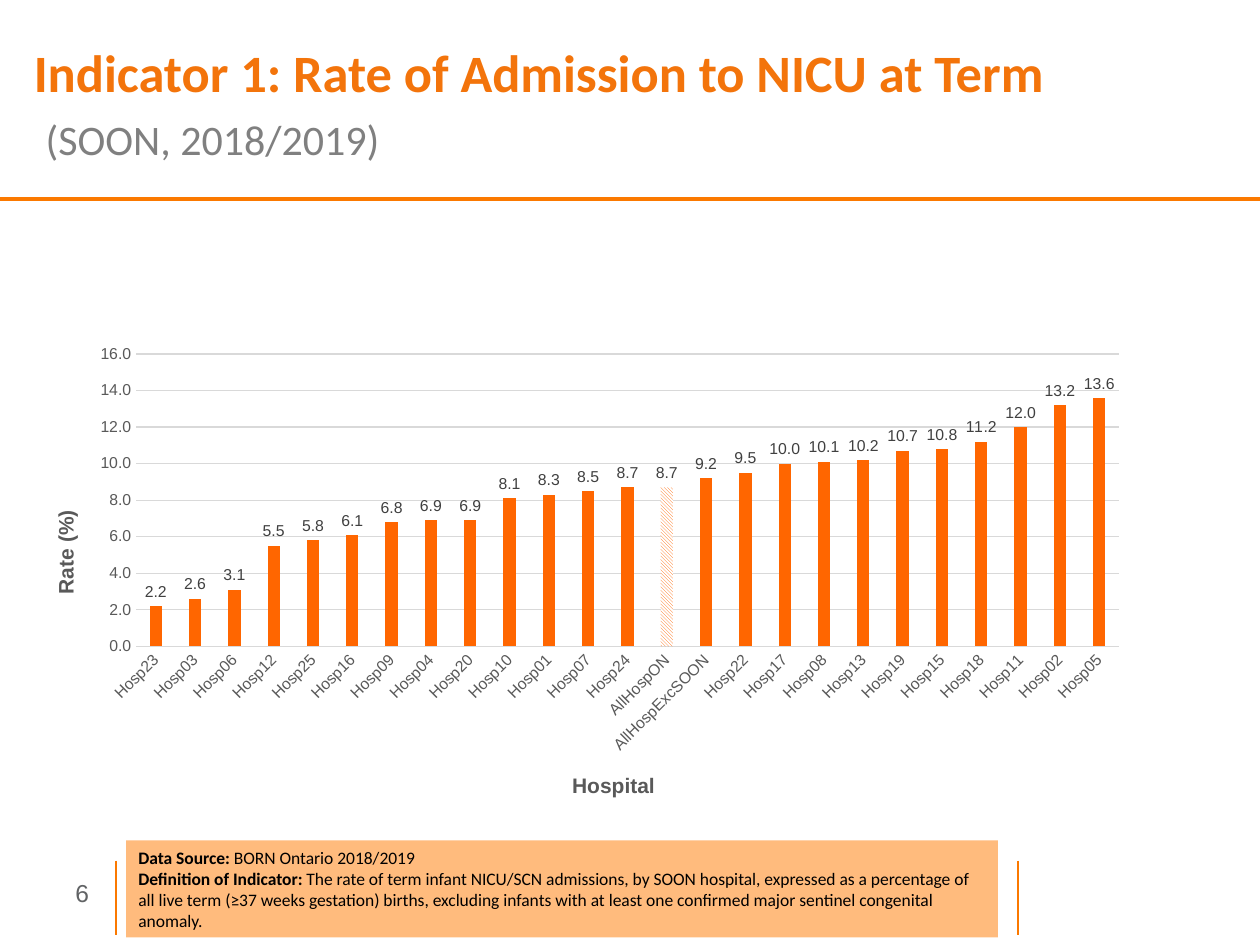
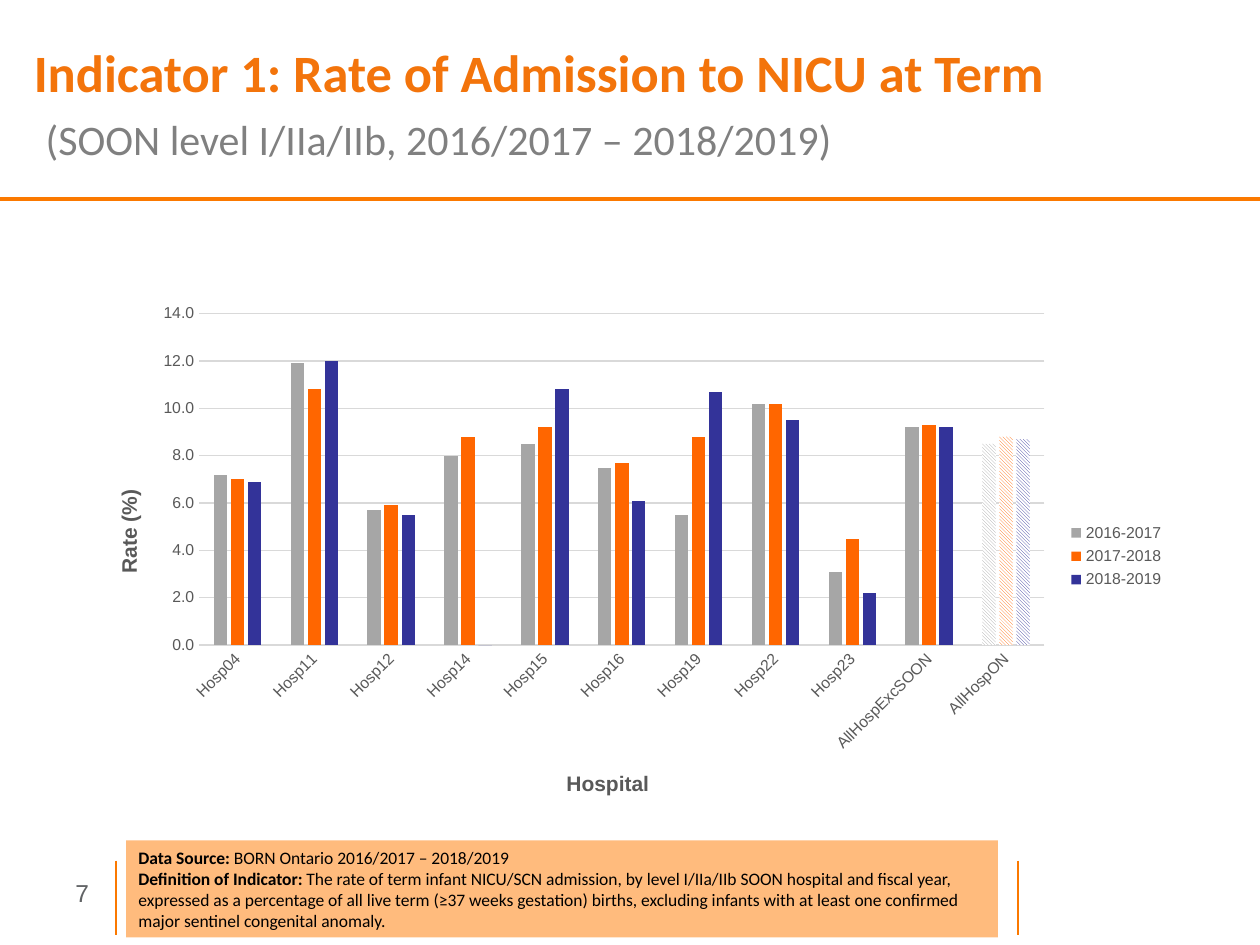
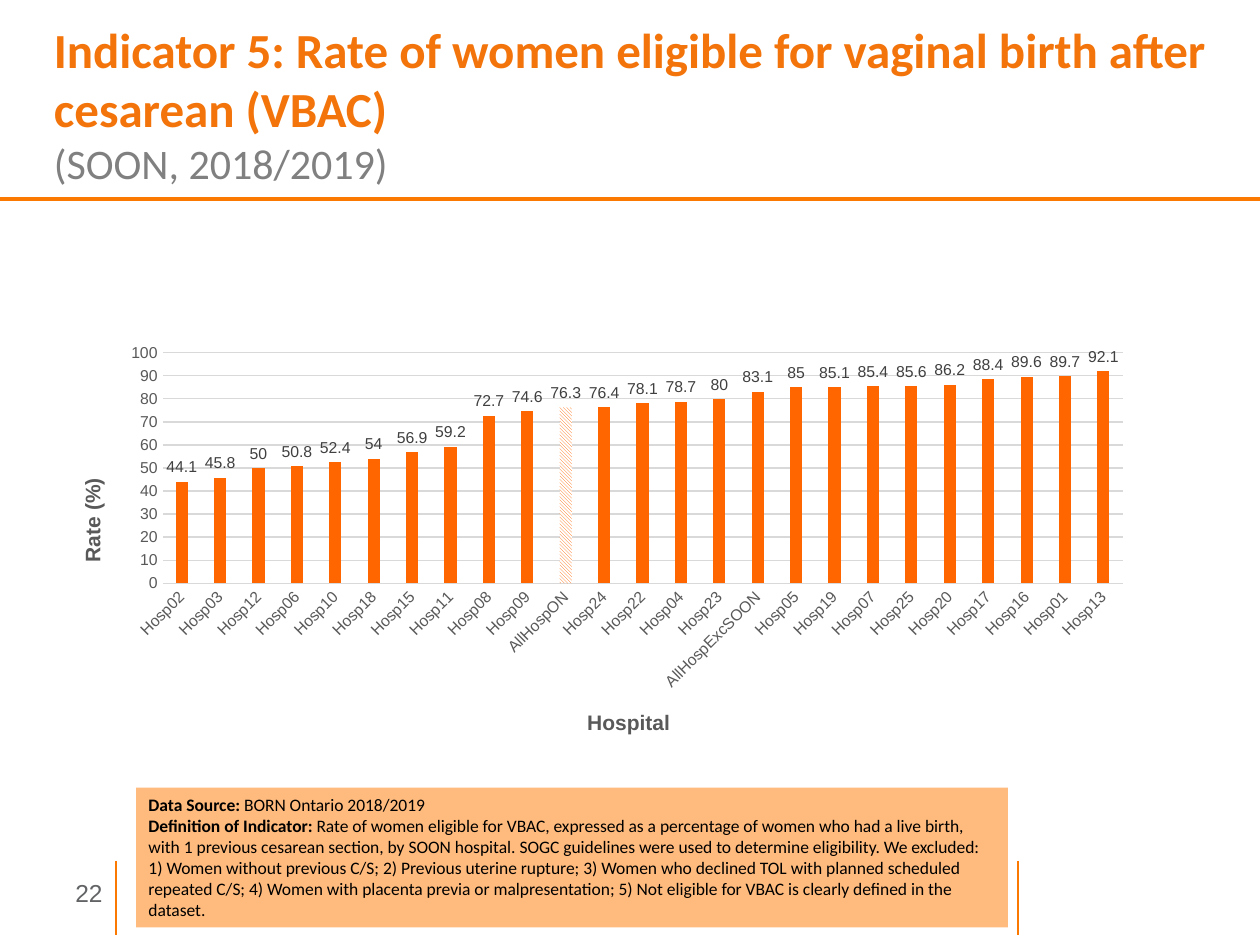
import lxml.etree
import pptx
import pptx.chart.data
import pptx.dml.color
import pptx.enum.chart
import pptx.enum.dml
import pptx.enum.shapes
import pptx.enum.text
import pptx.oxml.ns
import pptx.util
from pptx.util import Inches

ORANGE, TITLE_ORANGE, RULE_ORANGE, NOTE_FILL = "FF6600", "F3740B", "FB7900", "FFBB7D"
GREY, NAVY, AXIS_GREY, GRID_GREY = "A6A6A6", "333399", "595959", "D9D9D9"
ONE_DECIMAL = "##0.0"

NICU_TITLE = "Indicator 1: Rate of Admission to NICU at Term"


def rgb(value):
    return pptx.dml.color.RGBColor.from_string(value)


def assign(target, **values):
    for name, value in values.items():
        setattr(target, name, value)


def style_font(font, size, color, name="Arial", bold=False):
    assign(font, size=pptx.util.Pt(size), name=name, bold=bold)
    font.color.rgb = rgb(color)


def style_line(line, color, width):
    line.color.rgb = rgb(color)
    line.width = pptx.util.Pt(width)


def set_layout(element, index, values, inner=False):
    """Place a chart part; values are fractions of the chart keyed x, y, w, h."""
    qn = pptx.oxml.ns.qn
    for old in element.findall(qn("c:layout")):
        element.remove(old)
    layout = lxml.etree.Element(qn("c:layout"))
    element.insert(index, layout)
    manual = lxml.etree.SubElement(layout, qn("c:manualLayout"))
    settings = [("layoutTarget", "inner")] if inner else []
    settings += [("xMode", "edge"), ("yMode", "edge")]
    settings += [(key, f"{value:.4f}") for key, value in values.items()]
    for tag, value in settings:
        lxml.etree.SubElement(manual, qn("c:" + tag)).set("val", value)


class Deck:
    def __init__(self):
        self.prs = pptx.Presentation()
        assign(self.prs, slide_width=Inches(10), slide_height=Inches(7.5))
        self.slide = None

    def add_slide(self, number):
        self.slide = self.prs.slides.add_slide(self.prs.slide_layouts[6])
        for x in (8.08, 0.92):
            self.rule(x, 6.83, x, 7.42, 1)
        self.rule(0, 1.58, 10, 1.58, 2)
        frame = self.text_box(0.5, 6.92, 0.44, 0.33, word_wrap=False)
        self.run(frame.paragraphs[0], str(number), 14, "616365")

    def rule(self, x1, y1, x2, y2, width):
        line = self.slide.shapes.add_connector(
            pptx.enum.shapes.MSO_CONNECTOR.STRAIGHT,
            Inches(x1), Inches(y1), Inches(x2), Inches(y2))
        style_line(line.line, RULE_ORANGE, width)
        lxml.etree.SubElement(line._element.spPr, pptx.oxml.ns.qn("a:effectLst"))

    def text_box(self, x, y, w, h, **frame_format):
        box = self.slide.shapes.add_textbox(Inches(x), Inches(y), Inches(w), Inches(h))
        assign(box.text_frame, **frame_format)
        return box.text_frame

    def run(self, paragraph, text, size, color, name="Arial", bold=False):
        run = paragraph.add_run()
        run.text = text
        style_font(run.font, size, color, name, bold)

    def title(self, heading, subtitle, size=30, left=0.17, lead=""):
        frame = self.text_box(left, 0.17, 9.67, 1.25, word_wrap=True, margin_top=Inches(0.1),
                              vertical_anchor=pptx.enum.text.MSO_ANCHOR.MIDDLE)
        self.run(frame.paragraphs[0], heading, size, TITLE_ORANGE, "Calibri", True)
        second = frame.add_paragraph()
        if lead:
            self.run(second, lead, size, TITLE_ORANGE, "Calibri", True)
        self.run(second, subtitle, 24, "808080", "Calibri")

    def note(self, years, definition, left=1, top=6.67, height=0.77):
        box = self.slide.shapes.add_shape(
            pptx.enum.shapes.MSO_SHAPE.RECTANGLE,
            Inches(left), Inches(top), Inches(6.92), Inches(height))
        box.shadow.inherit = False
        box.fill.solid()
        box.fill.fore_color.rgb = rgb(NOTE_FILL)
        box.line.fill.background()
        frame = box.text_frame
        assign(frame, word_wrap=True, vertical_anchor=pptx.enum.text.MSO_ANCHOR.TOP,
               auto_size=pptx.enum.text.MSO_AUTO_SIZE.SHAPE_TO_FIT_TEXT)
        entries = [("Data Source: ", f"BORN Ontario {years}"),
                   ("Definition of Indicator: ", definition)]
        for index, (label, text) in enumerate(entries):
            paragraph = frame.add_paragraph() if index else frame.paragraphs[0]
            paragraph.alignment = pptx.enum.text.PP_ALIGN.LEFT
            self.run(paragraph, label, 10, "000000", "Calibri", True)
            self.run(paragraph, text, 10, "000000", "Calibri")

    def rate_chart(self, area, plot_area, hospitals, series, top_rate, step,
                   number_format="General"):
        """Column chart of rates; series holds (name, color, rates), areas are in inches."""
        data = pptx.chart.data.CategoryChartData(number_format=number_format)
        data.categories = hospitals
        for name, _, rates in series:
            data.add_series(name, rates)
        chart = self.slide.shapes.add_chart(
            pptx.enum.chart.XL_CHART_TYPE.COLUMN_CLUSTERED, *map(Inches, area), data).chart
        several = len(series) > 1
        assign(chart, has_title=False, has_legend=several)
        style_font(chart.font, 10, "000000")
        if several:
            assign(chart.legend, include_in_layout=False,
                   position=pptx.enum.chart.XL_LEGEND_POSITION.RIGHT)
            style_font(chart.legend.font, 9, AXIS_GREY)

        plot = chart.plots[0]
        assign(plot, gap_width=219, overlap=-27, vary_by_categories=False,
               has_data_labels=not several)
        if not several:
            assign(plot.data_labels, show_value=True, number_format=number_format,
                   number_format_is_linked=False,
                   position=pptx.enum.chart.XL_LABEL_POSITION.OUTSIDE_END)
            style_font(plot.data_labels.font, 9, "404040")
        for columns, (_, color, _) in zip(plot.series, series):
            columns.invert_if_negative = False
            columns.format.fill.solid()
            columns.format.fill.fore_color.rgb = rgb(color)
            province = columns.points[hospitals.index("AllHospON")].format.fill
            province.patterned()
            province.pattern = pptx.enum.dml.MSO_PATTERN.DARK_DOWNWARD_DIAGONAL
            province.fore_color.rgb = rgb(color)
            province.back_color.rgb = rgb("FFFFFF")

        self.rate_axes(chart, top_rate, step, number_format)
        self.place_parts(chart, area, plot_area)

    def rate_axes(self, chart, top_rate, step, number_format):
        hospital_axis, rate_axis = chart.category_axis, chart.value_axis
        for axis, title, turn in ((hospital_axis, "Hospital", 0),
                                  (rate_axis, "Rate (%)", -90)):
            assign(axis, major_tick_mark=pptx.enum.chart.XL_TICK_MARK.NONE,
                   minor_tick_mark=pptx.enum.chart.XL_TICK_MARK.NONE)
            style_font(axis.tick_labels.font, 9, AXIS_GREY)
            frame = axis.axis_title.text_frame
            self.run(frame.paragraphs[0], title, 12, AXIS_GREY, bold=True)
            frame._txBody.bodyPr.set("rot", str(turn * 60000))
            frame._txBody.bodyPr.set("vert", "horz")
        style_line(hospital_axis.format.line, GRID_GREY, 0.75)
        hospital_axis._element.txPr.bodyPr.set("rot", str(-45 * 60000))
        assign(rate_axis, minimum_scale=0, maximum_scale=top_rate, major_unit=step,
               has_major_gridlines=True)
        style_line(rate_axis.major_gridlines.format.line, GRID_GREY, 0.75)
        rate_axis.format.line.fill.background()
        assign(rate_axis.tick_labels, number_format=number_format,
               number_format_is_linked=False)

    def place_parts(self, chart, area, plot_area):
        """Set the plot area and hang both axis titles on it."""
        left, top, width, height = area
        x, y, w, h = plot_area

        def fractions(at_x, at_y):
            return {"x": (at_x - left) / width, "y": (at_y - top) / height}

        set_layout(chart._chartSpace.chart.plotArea, 0,
                   {**fractions(x, y), "w": w / width, "h": h / height}, inner=True)
        set_layout(chart.category_axis.axis_title._element, 1,
                   fractions(x + w / 2 - 0.47, y + h + 0.97))
        set_layout(chart.value_axis.axis_title._element, 1,
                   fractions(x - 0.69, y + h / 2 + 0.05))


def hospital_names(codes):
    """Turn two-digit codes into hospital names and keep the group names."""
    return ["Hosp" + code if code.isdigit() else code for code in codes.split()]


def main():
    deck = Deck()

    deck.add_slide(6)
    deck.title(NICU_TITLE, "(SOON, 2018/2019)", lead=" ")
    deck.note("2018/2019",
              "The rate of term infant NICU/SCN admissions, by SOON hospital, expressed as a "
              "percentage of all live term (≥37 weeks gestation) births, excluding infants with "
              "at least one confirmed major sentinel congenital anomaly.")
    deck.rate_chart(
        (0.17, 2.67, 8.89, 3.83), (1.08, 2.81, 7.8, 2.32),
        hospital_names("23 03 06 12 25 16 09 04 20 10 01 07 24 AllHospON AllHospExcSOON "
                       "22 17 08 13 19 15 18 11 02 05"),
        [("Series 1", ORANGE,
          [2.2, 2.6, 3.1, 5.5, 5.8, 6.1, 6.8, 6.9, 6.9, 8.1, 8.3, 8.5, 8.7, 8.7, 9.2, 9.5,
           10, 10.1, 10.2, 10.7, 10.8, 11.2, 12, 13.2, 13.6])],
        16, 2, ONE_DECIMAL)

    deck.add_slide(7)
    deck.title(NICU_TITLE, "(SOON level I/IIa/IIb, 2016/2017 – 2018/2019)", lead=" ")
    deck.note("2016/2017 – 2018/2019",
              "The rate of term infant NICU/SCN admission, by level I/IIa/IIb SOON hospital and "
              "fiscal year, expressed as a percentage of all live term (≥37 weeks gestation) "
              "births, excluding infants with at least one confirmed major sentinel congenital "
              "anomaly.")
    deck.rate_chart(
        (0.67, 2.33, 8.67, 4.17), (1.58, 2.49, 6.71, 2.63),
        hospital_names("04 11 12 14 15 16 19 22 23 AllHospExcSOON AllHospON"),
        [("2016-2017", GREY, [7.2, 11.9, 5.7, 8, 8.5, 7.5, 5.5, 10.2, 3.1, 9.2, 8.5]),
         ("2017-2018", ORANGE, [7, 10.8, 5.9, 8.8, 9.2, 7.7, 8.8, 10.2, 4.5, 9.3, 8.8]),
         ("2018-2019", NAVY, [6.9, 12, 5.5, 0, 10.8, 6.1, 10.7, 9.5, 2.2, 9.2, 8.7])],
        14, 2, ONE_DECIMAL)

    deck.add_slide(22)
    deck.title("Indicator 5: Rate of women eligible for vaginal birth after cesarean (VBAC)",
               "(SOON, 2018/2019)", size=28, left=0.33)
    deck.note("2018/2019",
              "Rate of women eligible for VBAC, expressed as a percentage of women who had a "
              "live birth, with 1 previous cesarean section, by SOON hospital. SOGC guidelines "
              "were used to determine eligibility. We excluded: 1) Women without previous C/S; "
              "2) Previous uterine rupture; 3) Women who declined TOL with planned scheduled "
              "repeated C/S; 4) Women with placenta previa or malpresentation; 5) Not eligible "
              "for VBAC is clearly defined in the dataset.",
              left=1.08, top=6.25, height=1.11)
    deck.rate_chart(
        (0.42, 2.67, 8.67, 3.33), (1.29, 2.8, 7.62, 1.83),
        hospital_names("02 03 12 06 10 18 15 11 08 09 AllHospON 24 22 04 23 AllHospExcSOON "
                       "05 19 07 25 20 17 16 01 13"),
        [("Series 1", ORANGE,
          [44.1, 45.8, 50, 50.8, 52.4, 54, 56.9, 59.2, 72.7, 74.6, 76.3, 76.4, 78.1, 78.7,
           80, 83.1, 85, 85.1, 85.4, 85.6, 86.2, 88.4, 89.6, 89.7, 92.1])],
        100, 10)

    deck.prs.save("out.pptx")


if __name__ == "__main__":
    main()
